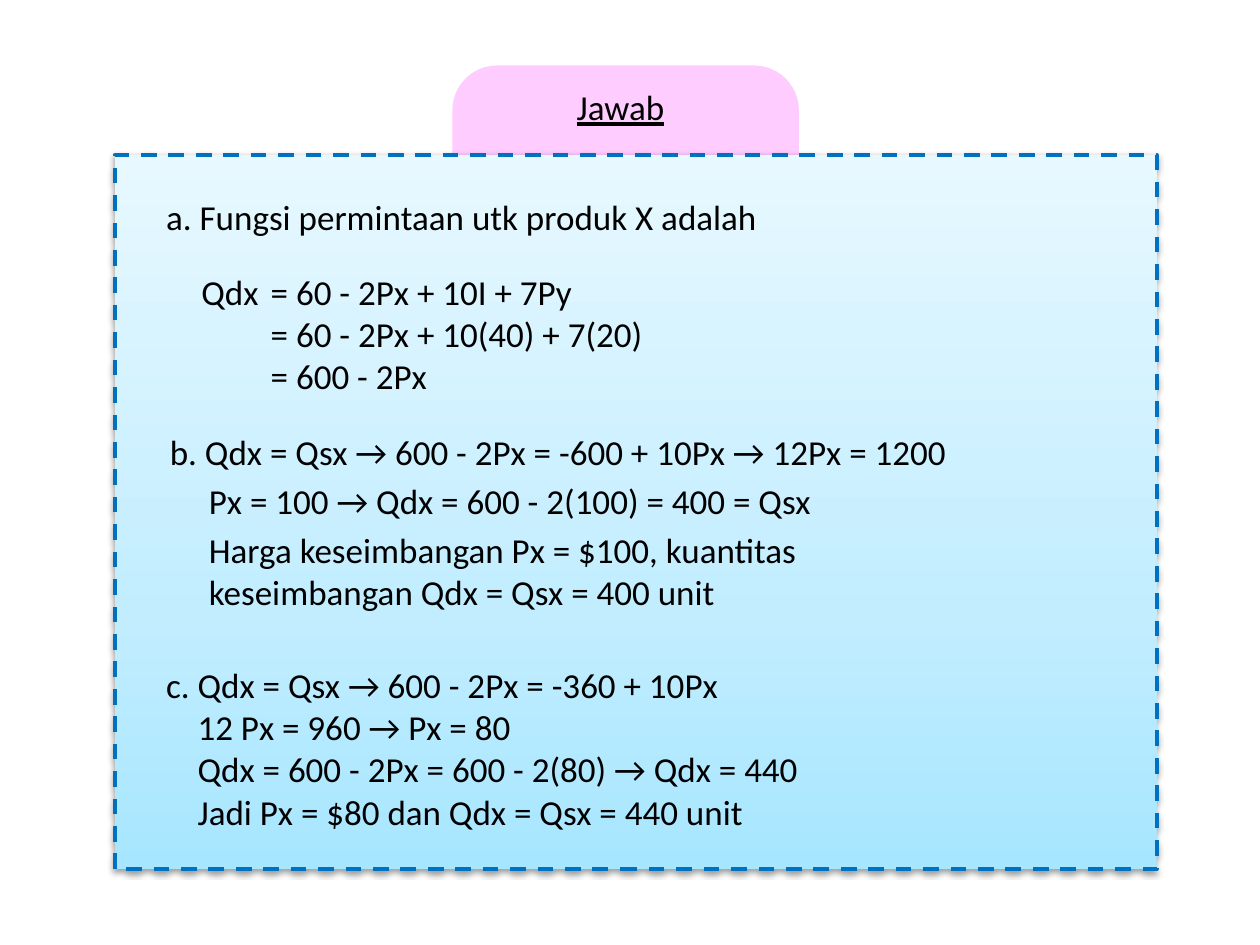
from lxml.etree import SubElement
from pptx import Presentation
from pptx.dml.color import RGBColor
from pptx.enum.dml import MSO_LINE
from pptx.enum.shapes import MSO_SHAPE
from pptx.enum.text import MSO_ANCHOR, PP_ALIGN
from pptx.oxml.ns import qn
from pptx.util import Inches, Pt

TITLE = "Jawab"
GRADIENT = [(0, "A7E6FF"), (35, "C1EDFF"), (100, "E7F8FF")]

# Each answer: box (left, top, width, height), space before, tab stop,
# and lines as (left indent, text)
ANSWERS = [
    ((1.22, 1.5, 4.94, 0.44), 0, None, [
        (0, "a. Fungsi permintaan utk produk X adalah"),
    ]),
    ((1.5, 2.1, 4.18, 1.11), 0, 0.55, [
        (0, "Qdx\t= 60 - 2Px + 10I + 7Py"),
        (0, "\t= 60 - 2Px + 10(40) + 7(20)"),
        (0, "\t= 600 - 2Px"),
    ]),
    ((1.25, 3.37, 6.74, 1.8), 4, None, [
        (0, "b. Qdx = Qsx → 600 - 2Px = -600 + 10Px → 12Px = 1200"),
        (0.31, "Px = 100 → Qdx = 600 - 2(100) = 400 = Qsx"),
        (0.31, "Harga keseimbangan Px = $100, kuantitas keseimbangan Qdx = Qsx = 400 unit"),
    ]),
    ((1.22, 5.22, 5.51, 1.45), 0, None, [
        (0, "c. Qdx = Qsx → 600 - 2Px = -360 + 10Px"),
        (0.25, "12 Px = 960 → Px = 80"),
        (0.25, "Qdx = 600 - 2Px = 600 - 2(80) → Qdx = 440"),
        (0.25, "Jadi Px = $80 dan Qdx = Qsx = 440 unit"),
    ]),
]


def color(value):
    return RGBColor.from_string(value)


def set_font(paragraph):
    font = paragraph.font
    font.name, font.size = "Calibri", Pt(20)
    font.color.rgb = color("000000")


def add_block(page, kind, area):
    block = page.shapes.add_shape(kind, *map(Inches, area))
    block.shadow.inherit = False
    return block


def add_color_element(parent, value):
    return SubElement(parent, qn("a:srgbClr"), val=value)


def fill_gradient(shape, stops):
    """Fill from bottom to top with any number of stops (percent, colour)."""
    shape.fill.gradient()
    shape.fill.gradient_angle = 90
    stop_list = shape.element.spPr.find(".//" + qn("a:gsLst"))
    for old in list(stop_list):
        stop_list.remove(old)
    for percent, value in stops:
        stop = SubElement(stop_list, qn("a:gs"), pos=str(percent * 1000))
        add_color_element(stop, value)


def add_shadow(shape):
    effects = shape.element.spPr.find(qn("a:effectLst"))
    shadow = SubElement(effects, qn("a:outerShdw"), blurRad=str(Pt(3.1)),
                        dist=str(Pt(1.6)), dir="5400000", rotWithShape="0")
    SubElement(add_color_element(shadow, "000000"), qn("a:alpha"), val="38000")


def add_answer(page, area, space_before, tab, lines):
    frame = page.shapes.add_textbox(*map(Inches, area)).text_frame
    frame.word_wrap = True
    for number, (indent, text) in enumerate(lines):
        para = frame.paragraphs[0] if number == 0 else frame.add_paragraph()
        para.text = text
        properties = para._p.get_or_add_pPr()
        if indent:
            properties.set("marL", str(Inches(indent)))
        if number and space_before:
            para.space_before = Pt(space_before)
        if tab:
            tabs = SubElement(properties, qn("a:tabLst"))
            SubElement(tabs, qn("a:tab"), pos=str(Inches(tab)), algn="l")
        set_font(para)


def main():
    deck = Presentation()
    deck.slide_width, deck.slide_height = Inches(10), Inches(7.5)
    page = deck.slides.add_slide(deck.slide_layouts[5])

    title_tab = add_block(page, MSO_SHAPE.ROUNDED_RECTANGLE, (3.59, 0.52, 2.75, 2.13))
    title_tab.fill.solid()
    title_tab.fill.fore_color.rgb = color("FFCCFF")
    title_tab.line.fill.background()

    panel = add_block(page, MSO_SHAPE.RECTANGLE, (0.91, 1.23, 8.27, 5.67))
    fill_gradient(panel, GRADIENT)
    panel.line.color.rgb = color("0070C0")
    panel.line.width = Pt(2.25)
    panel.line.dash_style = MSO_LINE.DASH
    add_shadow(panel)

    title = page.shapes.title
    title.left, title.top, title.width, title.height = map(Inches, (4.37, 0.54, 1.11, 0.61))
    title.text_frame.text = TITLE
    title.text_frame.vertical_anchor = MSO_ANCHOR.MIDDLE
    heading = title.text_frame.paragraphs[0]
    heading.alignment = PP_ALIGN.CENTER
    set_font(heading)
    heading.font.underline = True
    panel.element.addnext(title.element)  # bring the title in front of its tab

    for answer in ANSWERS:
        add_answer(page, *answer)
    deck.save("out.pptx")


if __name__ == "__main__":
    main()
